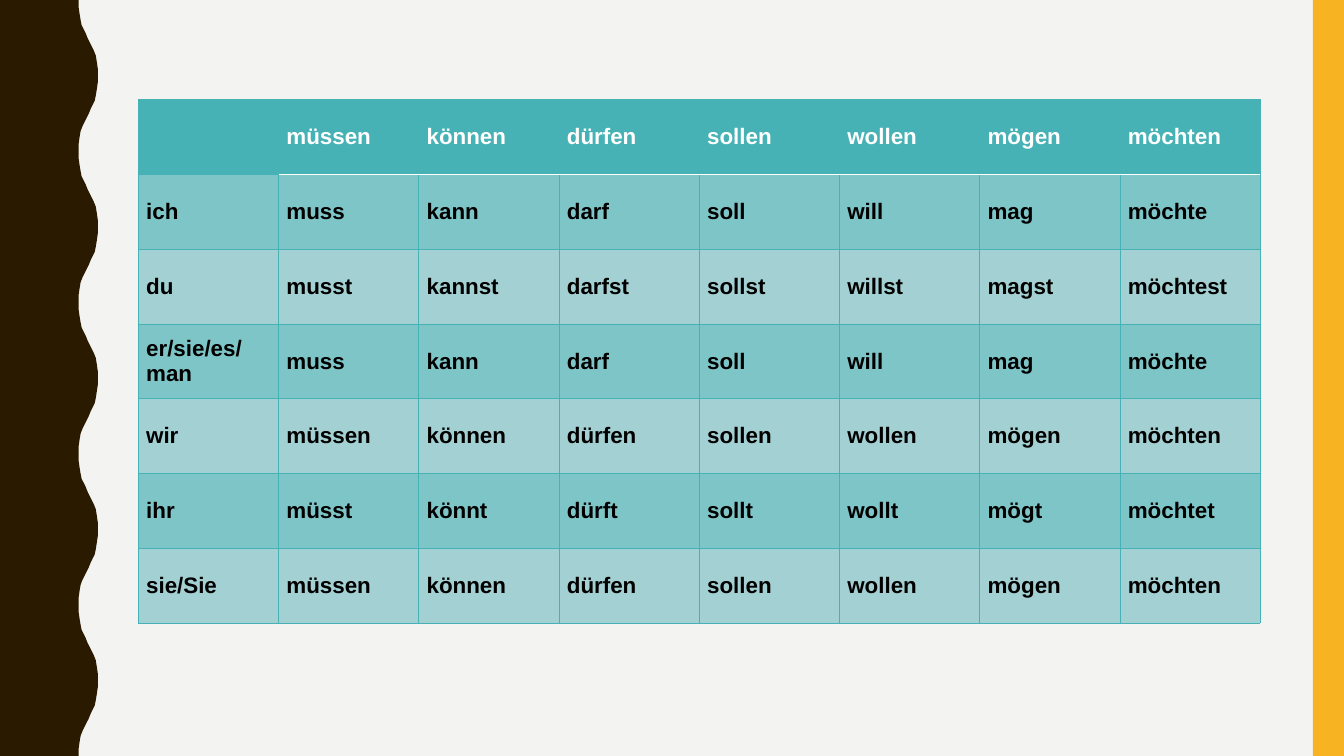
from collections import namedtuple

from pptx import Presentation
from pptx.dml.color import RGBColor as RGB
from pptx.enum.shapes import MSO_SHAPE as Shape
from pptx.enum.text import MSO_ANCHOR as Anchor
from pptx.oxml.ns import qn
from pptx.util import Inches, Pt
from lxml.etree import SubElement

Box = namedtuple("Box", "left top width height")

THEME = {
    "page": "F3F3F2",
    "wave": "2A1A00",
    "bar": "F8B323",
    "teal": "46B2B5",
    "band_dark": "7EC5C7",
    "band_light": "A3D0D2",
    "white": "FFFFFF",
    "black": "000000",
    "font": "Arial",
    "size": 16,
    "thin": 0.5,
    "thick": 1,
}

# Half a period of the wavy edge: depth and distance down, in inches
CREST, HALF_PERIOD = 0.97, 0.75
HALF_WAVE = [
    (0.78, 0), (0.78, 0.07), (0.79, 0.14), (0.8, 0.2), (0.81, 0.25),
    (0.83, 0.29), (0.85, 0.33), (0.87, 0.38), (0.89, 0.42), (0.91, 0.46),
    (0.93, 0.5), (0.95, 0.55), (0.96, 0.61), (0.97, 0.68),
]
TROUGH = HALF_WAVE[0][0]

VERBS = [
    ["", "müssen", "können", "dürfen", "sollen", "wollen", "mögen", "möchten"],
    ["ich", "muss", "kann", "darf", "soll", "will", "mag", "möchte"],
    ["du", "musst", "kannst", "darfst", "sollst", "willst", "magst", "möchtest"],
    ["er/sie/es/man", "muss", "kann", "darf", "soll", "will", "mag", "möchte"],
    ["wir", "müssen", "können", "dürfen", "sollen", "wollen", "mögen", "möchten"],
    ["ihr", "müsst", "könnt", "dürft", "sollt", "wollt", "mögt", "möchtet"],
    ["sie/Sie", "müssen", "können", "dürfen", "sollen", "wollen", "mögen", "möchten"],
]


def color(name):
    return RGB.from_string(THEME[name])


def paint(shape, name):
    shape.fill.solid()
    shape.fill.fore_color.rgb = color(name)
    shape.line.fill.background()
    shape.shadow.inherit = False


def add_wave(page, box):
    """Dark strip whose right edge swings between trough and crest."""
    edge = []
    for half in range(round(box.height / HALF_PERIOD)):
        for depth, down in HALF_WAVE:
            x = depth if half % 2 == 0 else TROUGH + CREST - depth
            edge.append((box.left + x, box.top + half * HALF_PERIOD + down))
    bottom = box.top + box.height
    edge += [(box.left + TROUGH, bottom), (box.left, bottom)]
    builder = page.shapes.build_freeform(Inches(box.left), Inches(box.top))
    builder.add_line_segments([(Inches(x), Inches(y)) for x, y in edge], close=True)
    paint(builder.convert_to_shape(), "wave")


def add_bar(page, box):
    bar = page.shapes.add_shape(Shape.RECTANGLE, *map(Inches, box))
    paint(bar, "bar")


def cell_borders(row, column):
    """Teal grid, with a white rule under the verbs in the header."""
    thin, thick = ("teal", THEME["thin"]), ("teal", THEME["thick"])
    rule = ("white", THEME["thick"]) if column else thin
    return {
        "a:lnL": thick if row and column == 1 else thin,
        "a:lnR": thick if row and column == 0 else thin,
        "a:lnT": rule if row == 1 else thin,
        "a:lnB": rule if row == 0 else thin,
    }


def style_cell(cell, row, column):
    properties = cell._tc.get_or_add_tcPr()
    for tag, (name, width) in cell_borders(row, column).items():
        line = SubElement(properties, qn(tag), w=str(Pt(width)))
        fill = SubElement(line, qn("a:solidFill"))
        SubElement(fill, qn("a:srgbClr"), val=THEME[name])
    band = "teal" if row == 0 else "band_dark" if row % 2 else "band_light"
    cell.fill.solid()
    cell.fill.fore_color.rgb = color(band)
    layout = {
        "vertical_anchor": Anchor.MIDDLE,
        "margin_left": Inches(0.08),
        "margin_right": Inches(0.08),
        "margin_top": Inches(0.04),
        "margin_bottom": Inches(0.04),
    }
    for key, value in layout.items():
        setattr(cell, key, value)


def add_verb_table(page, box):
    rows, columns = len(VERBS), len(VERBS[0])
    table = page.shapes.add_table(rows, columns, *map(Inches, box)).table
    for column in table.columns:
        column.width = Inches(box.width / columns)
    for row in table.rows:
        row.height = Inches(box.height / rows)
    for row, words in enumerate(VERBS):
        for column, word in enumerate(words):
            cell = table.cell(row, column)
            style_cell(cell, row, column)
            font_format = {"name": THEME["font"], "size": Pt(THEME["size"]), "bold": True}
            para = cell.text_frame.paragraphs[0]
            if not word:
                para.font.size = font_format["size"]
                continue
            span = para.add_run()
            span.text = word
            for key, value in font_format.items():
                setattr(span.font, key, value)
            span.font.color.rgb = color("black" if row else "white")


def main():
    width, height = 13.33, 7.5
    deck = Presentation()
    deck.slide_width, deck.slide_height = Inches(width), Inches(height)
    page = deck.slides.add_slide(deck.slide_layouts[6])
    page.background.fill.solid()
    page.background.fill.fore_color.rgb = color("page")

    # Side decorations
    add_wave(page, Box(0, 0, CREST, height))
    add_bar(page, Box(width - 0.31, 0, 0.31, height))

    # Modal verb conjugations
    add_verb_table(page, Box(1.37, 0.99, 11.13, 5.19))
    deck.save("out.pptx")


if __name__ == "__main__":
    main()
